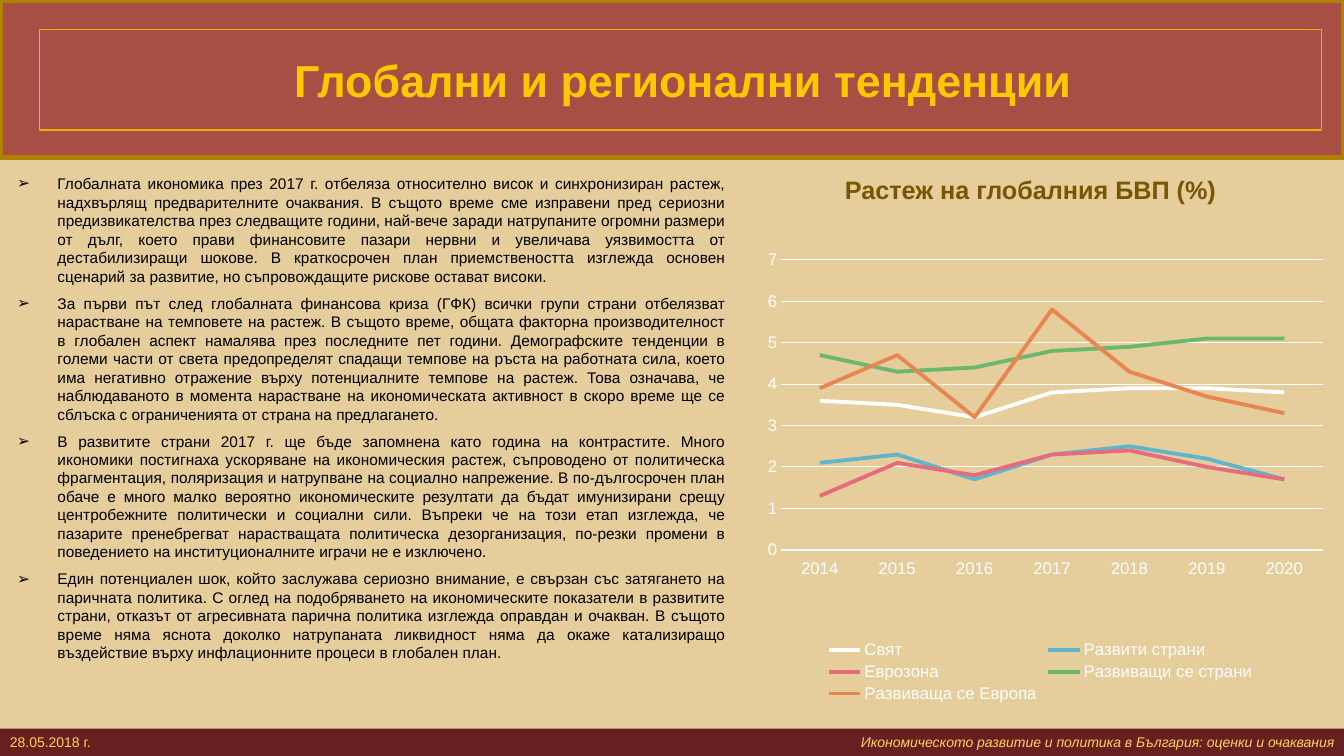
"""Build the slide on global and regional growth trends."""
from lxml import etree
from pptx import Presentation
from pptx import util as u
from pptx.chart.data import CategoryChartData
from pptx.dml.color import RGBColor
from pptx.enum import chart as ch, shapes, text
from pptx.oxml import parse_xml
from pptx.oxml.ns import nsdecls, qn

FONT = "Arial"
COLORS = {
    "background": "E5CD9C", "banner": "A84F45", "banner_line": "B28000",
    "title": "FFC800", "title_line": "F0AD00", "bar": "672020",
    "bar_text": "FFD25D", "body": "000000", "heading": "785600", "white": "FFFFFF",
    "world": "FFFFFF", "advanced": "60B5CC", "eurozone": "E66C7D",
    "emerging": "6BB76D", "emerging_europe": "E88651",
}
BULLETS = [
    "Глобалната икономика през 2017 г. отбеляза относително висок и синхронизиран растеж, "
    "надхвърлящ предварителните очаквания. В същото време сме изправени пред сериозни "
    "предизвикателства през следващите години, най-вече заради натрупаните огромни размери "
    "от дълг, което прави финансовите пазари нервни и увеличава уязвимостта от "
    "дестабилизиращи шокове. В краткосрочен план приемствеността изглежда основен "
    "сценарий за развитие, но съпровождащите рискове остават високи.",
    "За първи път след глобалната финансова криза (ГФК) всички групи страни отбелязват "
    "нарастване на темповете на растеж. В същото време, общата факторна производителност "
    "в глобален аспект намалява през последните пет години. Демографските тенденции в "
    "големи части от света предопределят спадащи темпове на ръста на работната сила, което "
    "има негативно отражение върху потенциалните темпове на растеж. Това означава, че "
    "наблюдаваното в момента нарастване на икономическата активност в скоро време ще се "
    "сблъска с ограниченията от страна на предлагането.",
    "В развитите страни 2017 г. ще бъде запомнена като година на контрастите. Много "
    "икономики постигнаха ускоряване на икономическия растеж, съпроводено от политическа "
    "фрагментация, поляризация и натрупване на социално напрежение. В по-дългосрочен план "
    "обаче е много малко вероятно икономическите резултати да бъдат имунизирани срещу "
    "центробежните политически и социални сили. Въпреки че на този етап изглежда, че "
    "пазарите пренебрегват нарастващата политическа дезорганизация, по-резки промени в "
    "поведението на институционалните играчи не е изключено.",
    "Един потенциален шок, който заслужава сериозно внимание, е свързан със затягането на "
    "паричната политика. С оглед на подобряването на икономическите показатели в развитите "
    "страни, отказът от агресивната парична политика изглежда оправдан и очакван. В същото "
    "време няма яснота доколко натрупаната ликвидност няма да окаже катализиращо "
    "въздействие върху инфлационните процеси в глобален план.",
]
YEARS = [str(year) for year in range(2014, 2021)]
GROWTH = [
    ("Свят", "world", (3.6, 3.5, 3.2, 3.8, 3.9, 3.9, 3.8)),
    ("Развити страни", "advanced", (2.1, 2.3, 1.7, 2.3, 2.5, 2.2, 1.7)),
    ("Еврозона", "eurozone", (1.3, 2.1, 1.8, 2.3, 2.4, 2.0, 1.7)),
    ("Развиващи се страни", "emerging", (4.7, 4.3, 4.4, 4.8, 4.9, 5.1, 5.1)),
    ("Развиваща се Европа", "emerging_europe", (3.9, 4.7, 3.2, 5.8, 4.3, 3.7, 3.3)),
]
PLOT_AREA = {"x": 0.074, "y": 0.059, "w": 0.89, "h": 0.611}


def rgb(name):
    return RGBColor.from_string(COLORS[name])


def place(sp, *box):
    sp.left, sp.top, sp.width, sp.height = map(u.Inches, box)


def style_font(font, size, color, bold=False, italic=False):
    font.name, font.size = FONT, u.Pt(size)
    font.bold, font.italic = bold, italic
    font.color.rgb = rgb(color)


def style_line(line, color, width):
    line.color.rgb = rgb(color)
    line.width = u.Pt(width)


def add_rect(s, box, fill, line=None, width=0):
    sp = s.shapes.add_shape(shapes.MSO_SHAPE.RECTANGLE, *map(u.Inches, box))
    sp.shadow.inherit = False
    sp.fill.solid()
    sp.fill.fore_color.rgb = rgb(fill)
    if line:
        style_line(sp.line, line, width)
    else:
        sp.line.fill.background()
    return sp


def add_label(s, box, content, align, size, color, **style):
    tf = s.shapes.add_textbox(*map(u.Inches, box)).text_frame
    tf.word_wrap = True
    tf.vertical_anchor = text.MSO_ANCHOR.MIDDLE
    tf.margin_top = tf.margin_bottom = 0
    p = tf.paragraphs[0]
    p.text = content
    p.alignment = align
    style_font(p.runs[0].font, size, color, **style)


def fill_title(sp, content):
    place(sp, 0.39, 0.29, 12.72, 1)
    style_line(sp.line, "title_line", 0.75)
    tf = sp.text_frame
    tf.text = content
    tf.auto_size = text.MSO_AUTO_SIZE.NONE
    tf.vertical_anchor = text.MSO_ANCHOR.MIDDLE
    tf.margin_right = u.Inches(0.05)
    p = tf.paragraphs[0]
    p.alignment = text.PP_ALIGN.CENTER
    style_font(p.runs[0].font, 32, "title", bold=True)


def set_bullet(p, char, indent):
    pPr = p._p.get_or_add_pPr()
    pPr.set("marL", str(u.Inches(indent)))
    pPr.set("indent", str(-u.Inches(indent)))
    etree.SubElement(pPr, qn("a:buFont")).set("typeface", FONT)
    etree.SubElement(pPr, qn("a:buChar")).set("char", char)


def fill_bullets(sp, items):
    place(sp, 0.07, 1.68, 7.23, 5.25)
    tf = sp.text_frame
    tf.text = "\n".join(items)
    tf.auto_size = text.MSO_AUTO_SIZE.NONE
    tf.vertical_anchor = text.MSO_ANCHOR.TOP
    for p in tf.paragraphs:
        p.alignment = text.PP_ALIGN.JUSTIFY
        p.line_spacing = u.Pt(13.2)
        p.space_before, p.space_after = u.Pt(0), u.Pt(6)
        set_bullet(p, "➢", 0.4)
        style_font(p.runs[0].font, 11, "body")


def set_plot_area(chart, area):
    plot_area = chart.element.find(".//" + qn("c:plotArea"))
    for layout in plot_area.findall(qn("c:layout")):
        plot_area.remove(layout)
    modes = "".join(f'<c:{k}Mode val="edge"/>' for k in "xy")
    sizes = "".join(f'<c:{k} val="{v}"/>' for k, v in area.items())
    plot_area.insert(0, parse_xml(
        f'<c:layout {nsdecls("c")}><c:manualLayout><c:layoutTarget val="inner"/>'
        f'{modes}{sizes}</c:manualLayout></c:layout>'))


def style_axes(chart):
    for axis in (chart.category_axis, chart.value_axis):
        axis.major_tick_mark = axis.minor_tick_mark = ch.XL_TICK_MARK.NONE
        style_font(axis.tick_labels.font, 12, "white")
    chart.category_axis.tick_label_position = ch.XL_TICK_LABEL_POSITION.LOW
    style_line(chart.category_axis.format.line, "white", 1)
    values = chart.value_axis
    values.minimum_scale, values.maximum_scale, values.major_unit = 0, 7, 1
    values.format.line.fill.background()
    style_line(values.major_gridlines.format.line, "white", 0.75)


def add_growth_chart(s, *box):
    data = CategoryChartData()
    data.categories = YEARS
    for name, _, values in GROWTH:
        data.add_series(name, values)
    chart = s.shapes.add_chart(
        ch.XL_CHART_TYPE.LINE, *map(u.Inches, box), data).chart
    style_font(chart.font, 10, "white")
    chart.has_title = False
    chart.has_legend = True
    chart.legend.position = ch.XL_LEGEND_POSITION.BOTTOM
    chart.legend.include_in_layout = False
    style_font(chart.legend.font, 12, "white")
    style_axes(chart)
    set_plot_area(chart, PLOT_AREA)
    plot = chart.plots[0]
    plot.vary_by_categories = False
    for series, (_, color, _) in zip(plot.series, GROWTH):
        series.smooth = False
        series.marker.style = ch.XL_MARKER_STYLE.NONE
        style_line(series.format.line, color, 2.75)


def main():
    prs = Presentation()
    prs.slide_width, prs.slide_height = u.Inches(13.33), u.Inches(7.5)
    s = prs.slides.add_slide(prs.slide_layouts[1])
    s.background.fill.solid()
    s.background.fill.fore_color.rgb = rgb("background")
    banner = add_rect(s, (0, 0, 13.33, 1.56), "banner", "banner_line", 3.78)
    s.shapes.element.insert(2, banner.element)
    fill_title(s.shapes.title, "Глобални и регионални тенденции")
    fill_bullets(s.placeholders[1], BULLETS)
    add_rect(s, (0, 7.23, 13.33, 0.27), "bar")
    add_label(s, (0, 7.23, 3, 0.27), "28.05.2018 г.",
              text.PP_ALIGN.LEFT, 10, "bar_text")
    add_label(s, (7.33, 7.23, 6, 0.27),
              "Икономическото развитие и политика в България: оценки и очаквания",
              text.PP_ALIGN.RIGHT, 10, "bar_text", italic=True)
    add_label(s, (8.13, 1.68, 4.18, 0.4), "Растеж на глобалния БВП (%)",
              text.PP_ALIGN.CENTER, 18, "heading", bold=True)
    add_growth_chart(s, 7.3, 2.3, 6.04, 4.71)
    prs.save("out.pptx")


if __name__ == "__main__":
    main()
